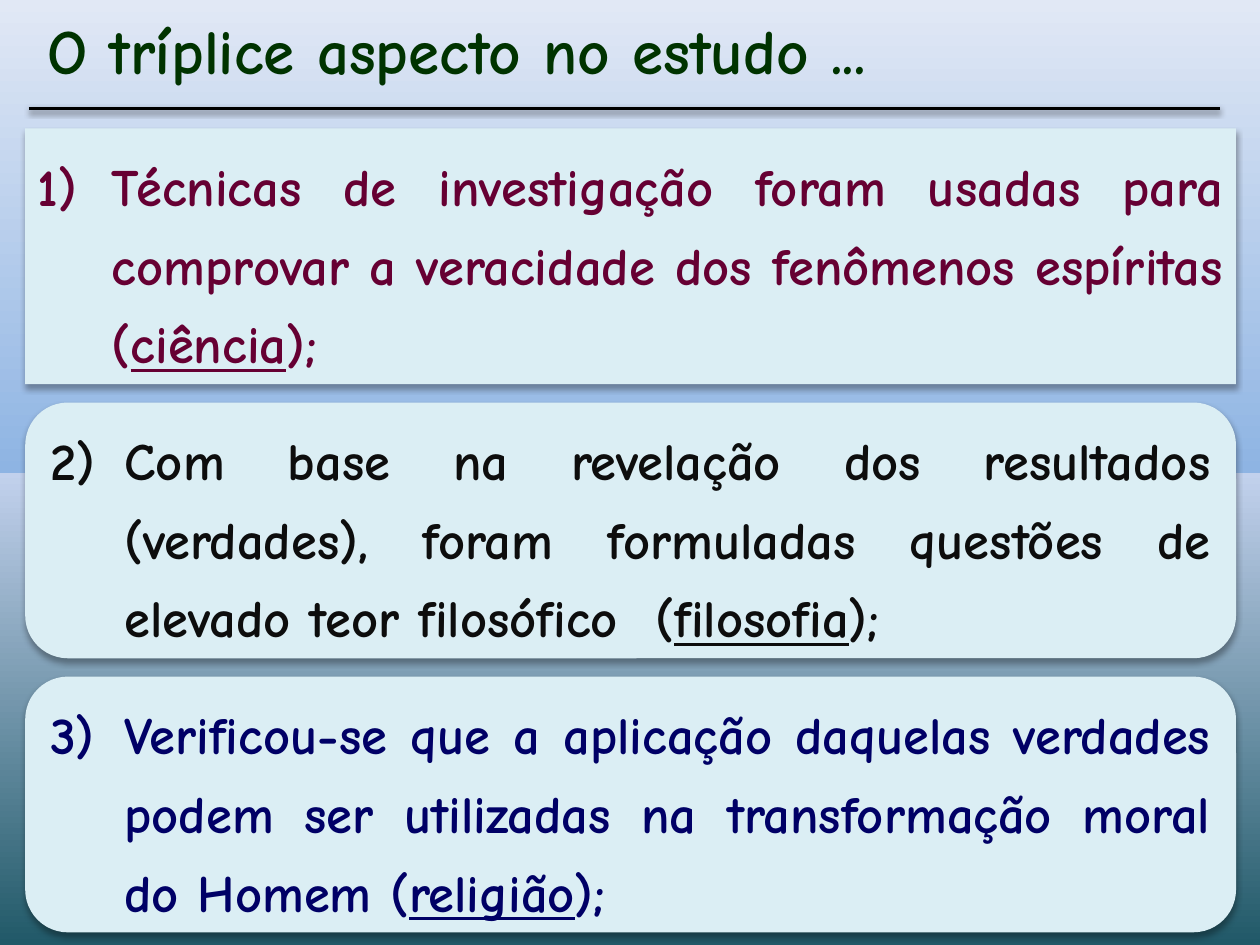
from dataclasses import dataclass

from pptx import Presentation
from pptx import util as u
from pptx.dml.color import RGBColor
from pptx.enum import shapes, text
from pptx.oxml import parse_xml
from pptx.oxml.ns import nsdecls

HUES = {
    "teal": "215968", "mist": "C2D1ED", "sky": "8EB4E3", "pale": "E1E8F5",
    "panel": "DBEEF4", "black": "000000", "green": "003300",
    "wine": "660033", "ink": "0D0D0D", "navy": "000066",
}
STOPS = [(0, "teal"), (50, "mist"), (50, "sky"), (100, "pale")]
FACE = "Comic Neue"
LEFT, TOP, WIDTH, HEIGHT, PITCH = 0.2, 1.02, 9.61, 2.03, 2.175
RECT = shapes.MSO_SHAPE.RECTANGLE
ROUND = shapes.MSO_SHAPE.ROUNDED_RECTANGLE


@dataclass
class Panel:
    form: shapes.MSO_SHAPE
    hue: str
    lead: str
    term: str


PANELS = [
    Panel(RECT, "wine", "1)\tTécnicas de investigação foram usadas para comprovar "
          "a veracidade dos fenômenos espíritas (", "ciência"),
    Panel(ROUND, "ink", "2)\tCom base na revelação dos resultados (verdades), foram "
          "formuladas questões de elevado teor filosófico  (", "filosofia"),
    Panel(ROUND, "navy", "3)\tVerificou-se que a aplicação daquelas verdades podem ser "
          "utilizadas na transformação moral do Homem (", "religião"),
]


def apply(item, values: dict) -> None:
    for name, value in values.items():
        setattr(item, name, value)


def paint(slide) -> None:
    slide.background.fill.gradient()
    grad = slide.background.fill._fill._gradFill
    for child in list(grad):
        grad.remove(child)
    stops = "".join(
        f'<a:gs pos="{pos * 1000}"><a:srgbClr val="{HUES[hue]}"/></a:gs>'
        for pos, hue in STOPS
    )
    grad.append(parse_xml(f'<a:gsLst {nsdecls("a")}>{stops}</a:gsLst>'))
    grad.append(parse_xml(f'<a:lin {nsdecls("a")} ang="{270 * 60000}" scaled="0"/>'))


def shade(shape, alpha: int, blur: float, dist: float) -> None:
    shape._element.spPr.append(parse_xml(
        f'<a:effectLst {nsdecls("a")}><a:outerShdw blurRad="{u.Pt(blur)}" '
        f'dist="{u.Pt(dist)}" dir="{90 * 60000}" rotWithShape="0">'
        f'<a:srgbClr val="{HUES["black"]}"><a:alpha val="{alpha * 1000}"/></a:srgbClr>'
        '</a:outerShdw></a:effectLst>'
    ))


def indent(para, size: float) -> None:
    props = para._p.get_or_add_pPr()
    props.set("marL", str(u.Inches(size)))
    props.set("indent", str(-u.Inches(size)))


def write(para, words: str, hue: str, size: int, under: bool = False) -> None:
    run = para.add_run()
    run.text = words
    apply(run.font, {"name": FACE, "size": u.Pt(size), "bold": True, "underline": under})
    run.font.color.rgb = RGBColor.from_string(HUES[hue])


def draw_head(slide) -> None:
    head = slide.shapes.add_shape(
        ROUND, u.Inches(0.23), u.Inches(0), u.Inches(9.53), u.Inches(0.94))
    head.shadow.inherit = False
    head.fill.background()
    head.line.fill.background()
    apply(head.text_frame, {"word_wrap": True, "vertical_anchor": text.MSO_ANCHOR.TOP})
    para = head.text_frame.paragraphs[0]
    para.alignment = text.PP_ALIGN.LEFT
    indent(para, 0.38)
    write(para, "O tríplice aspecto no estudo ...", "green", 36)


def draw_rule(slide) -> None:
    rule = slide.shapes.add_connector(
        shapes.MSO_CONNECTOR.STRAIGHT,
        u.Inches(0.23), u.Inches(0.86), u.Inches(9.68), u.Inches(0.86))
    rule.line.width = u.Pt(2)
    rule.line.color.rgb = RGBColor.from_string(HUES["black"])
    shade(rule, 38, 3.1, 1.6)


def draw_panel(slide, panel: Panel, row: int) -> None:
    box = slide.shapes.add_shape(
        panel.form, u.Inches(LEFT), u.Inches(TOP + row * PITCH),
        u.Inches(WIDTH), u.Inches(HEIGHT))
    box.fill.solid()
    box.fill.fore_color.rgb = RGBColor.from_string(HUES["panel"])
    box.line.fill.background()
    shade(box, 32, 3.5, 2.2)
    pad = u.Inches(0.1)
    apply(box.text_frame, {
        "word_wrap": True, "vertical_anchor": text.MSO_ANCHOR.MIDDLE,
        "margin_left": pad, "margin_top": pad,
        "margin_right": pad, "margin_bottom": pad,
    })
    para = box.text_frame.paragraphs[0]
    apply(para, {"alignment": text.PP_ALIGN.JUSTIFY, "line_spacing": 1.25})
    indent(para, 0.59)
    for words, under in [(panel.lead, False), (panel.term, True), ("); ", False)]:
        write(para, words, panel.hue, 30, under)


def main() -> None:
    deck = Presentation()
    apply(deck, {"slide_width": u.Inches(10), "slide_height": u.Inches(7.5)})
    slide = deck.slides.add_slide(deck.slide_layouts[6])
    paint(slide)
    draw_head(slide)
    draw_rule(slide)
    for row, panel in enumerate(PANELS):
        draw_panel(slide, panel, row)
    deck.save("out.pptx")


if __name__ == "__main__":
    main()
